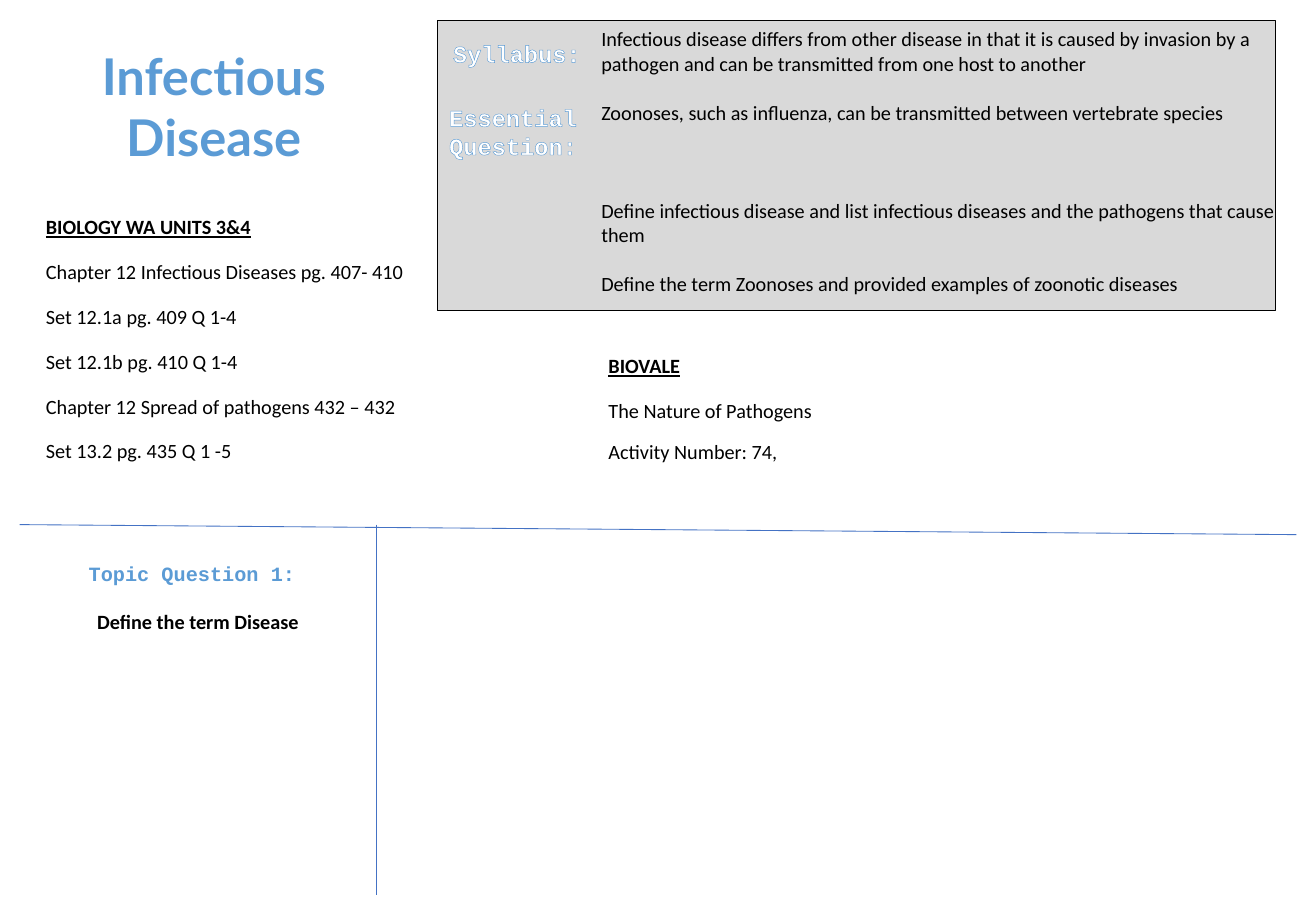
from lxml.etree import SubElement as Sub
from pptx import Presentation
from pptx.dml.color import RGBColor as Rgb
from pptx.enum.shapes import MSO_CONNECTOR as Link, MSO_SHAPE as Form
from pptx.enum.text import MSO_ANCHOR as Anchor, MSO_AUTO_SIZE as Fit, PP_ALIGN as Align
from pptx.oxml.ns import qn
from pptx.util import Cm, Pt

HUES = {"ink": "000000", "white": "FFFFFF", "grey": "D9D9D9", "sky": "5B9BD5", "blue": "4472C4"}

BODY = {"font": "Calibri", "size": 12, "hue": "ink"}
HEAD = {**BODY, "bold": True, "under": True, "lead": 1.15, "after": 10}
ITEM = {**BODY, "lead": 1.15, "after": 10}
LABEL = {"font": "Courier New", "size": 14, "hue": "white", "bold": True, "edge": "sky"}
TITLE = {"font": "Lato", "size": 30, "hue": "sky", "bold": True, "align": Align.CENTER}
TOPIC = {"font": "Courier New", "size": 12, "hue": "sky", "bold": True, "align": Align.CENTER}
TASK = {**BODY, "bold": True, "align": Align.CENTER, "before": 14}
GAP = 14.65

PANEL = (9.14, 0.43, 17.53, 6.07)
NAME = ((0.33, 0.81, 8.28, 2.18), [("Infectious Disease", TITLE)])
TEXTS = [
    ((12.32, 0.43, 14.88, 6.07), True, [
        ("Infectious disease differs from other disease in that it is caused by invasion by a "
         "pathogen and can be transmitted from one host to another", BODY),
        ("Zoonoses, such as influenza, can be transmitted between vertebrate species",
         {**BODY, "before": GAP}),
        ("Define infectious disease and list infectious diseases and the pathogens that cause them",
         {**BODY, "before": 3 * GAP}),
        ("Define the term Zoonoses and provided examples of zoonotic diseases",
         {**BODY, "before": GAP}),
    ]),
    ((9.14, 2.03, 3.23, 1.45), False, [("Essential", LABEL), ("Question:", LABEL)]),
    ((9.22, 0.69, 3.23, 0.86), False, [("Syllabus:", LABEL)]),
    ((1.17, 11.61, 5.94, 1.9), True, [
        ("Topic Question 1: ", TOPIC),
        ("Define the term Disease", TASK),
    ]),
    ((0.71, 4.29, 13.77, 5.59), True, [
        ("BIOLOGY WA UNITS 3&4", HEAD),
        ("Chapter 12 Infectious Diseases pg. 407- 410", ITEM),
        ("Set 12.1a pg. 409 Q 1-4", ITEM),
        ("Set 12.1b pg. 410 Q 1-4", ITEM),
        ("Chapter 12 Spread of pathogens 432 – 432", ITEM),
        ("Set 13.2 pg. 435 Q 1 -5", ITEM),
    ]),
    ((12.47, 7.19, 13.77, 2.67), True, [
        ("BIOVALE", HEAD),
        ("The Nature of Pathogens", ITEM),
        ("Activity Number: 74,", BODY),
    ]),
]
RULES = [(7.87, 10.97, 7.87, 18.72), (0.41, 10.97, 27.1, 11.18)]


def tint(key):
    return Rgb.from_string(HUES[key])


def write(frame, rows, wrap=True):
    frame.word_wrap = wrap
    frame.auto_size = Fit.NONE
    frame.vertical_anchor = Anchor.TOP
    for num, (words, look) in enumerate(rows):
        para = frame.add_paragraph() if num else frame.paragraphs[0]
        para.alignment = look.get("align", Align.LEFT)
        para.line_spacing = look.get("lead", 1.0)
        para.space_before = Pt(look.get("before", 0))
        para.space_after = Pt(look.get("after", 0))
        run = para.add_run()
        run.text = words
        font = run.font
        font.name, font.size = look["font"], Pt(look["size"])
        font.bold = look.get("bold", False)
        font.underline = look.get("under", False)
        font.color.rgb = tint(look["hue"])
        if "edge" in look:
            props = run._r.get_or_add_rPr()
            line = Sub(props, qn("a:ln"), w=str(Pt(0.8)))
            fill = Sub(line, qn("a:solidFill"))
            Sub(fill, qn("a:srgbClr"), val=HUES[look["edge"]])
            props.insert(0, line)


def main():
    deck = Presentation()
    deck.slide_width, deck.slide_height = Cm(27.51), Cm(19.05)
    slide = deck.slides.add_slide(deck.slide_layouts[5])
    shapes = slide.shapes

    panel = shapes.add_shape(Form.RECTANGLE, *map(Cm, PANEL))
    panel.shadow.inherit = False
    panel.fill.solid()
    panel.fill.fore_color.rgb = tint("grey")
    panel.line.color.rgb = tint("ink")
    panel.line.width = Pt(0.5)

    place, rows = NAME
    title = shapes.title
    title.left, title.top, title.width, title.height = map(Cm, place)
    write(title.text_frame, rows)

    for place, wrap, rows in TEXTS:
        write(shapes.add_textbox(*map(Cm, place)).text_frame, rows, wrap)

    for ends in RULES:
        rule = shapes.add_connector(Link.STRAIGHT, *map(Cm, ends))
        rule.line.color.rgb = tint("blue")
        rule.line.width = Pt(0.5)
        Sub(rule._element.spPr, qn("a:effectLst"))

    deck.save("out.pptx")


if __name__ == "__main__":
    main()
